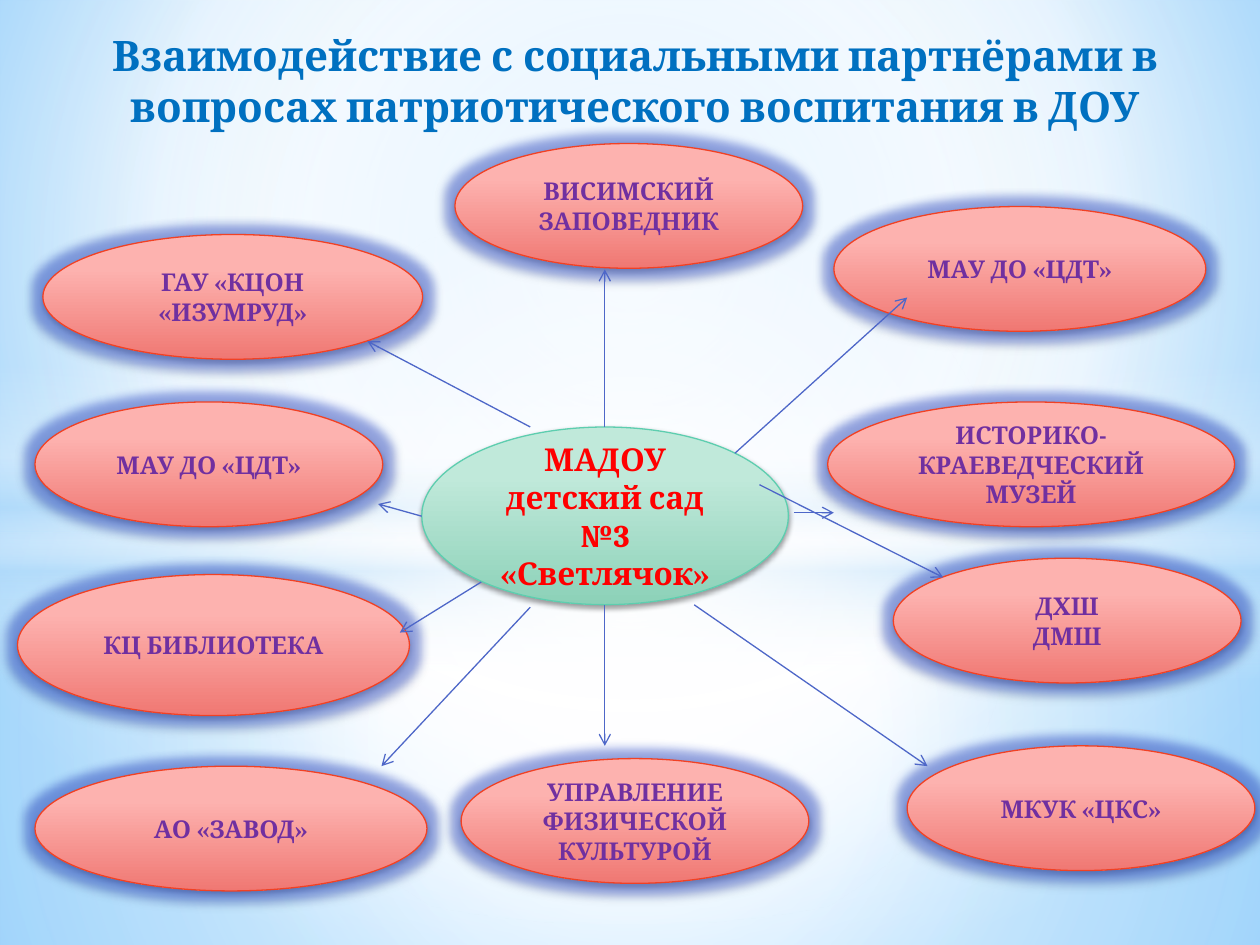
"""Builds a slide of a kindergarten and its social partners."""
from typing import NamedTuple, Optional

import lxml.etree
import pptx
import pptx.dml.color
import pptx.enum.shapes
import pptx.enum.text
import pptx.oxml
import pptx.oxml.ns
import pptx.util

Pt = pptx.util.Pt
Shapes = pptx.enum.shapes.MSO_SHAPE
FONT = "Cambria"
COLORS = {
    "title": "0070C0", "center_text": "FF0000", "partner_text": "7030A0",
    "center_light": "C0E9DA", "center_dark": "8CD1B8", "center_line": "5DCEAF",
    "partner_light": "FDB2AF", "partner_dark": "F07873", "partner_line": "F14124",
    "arrow": "4E67C8", "glow": "2F52E0", "shadow": "000000",
    "white": "FFFFFF", "haze": "B4DCFA", "sky": "9ED5FF", "deep_sky": "5BB9FF",
}


class Stop(NamedTuple):
    position: int
    color: str
    opacity: int = 100


class Gradient(NamedTuple):
    stops: list[Stop]
    focus: Optional[tuple[int, int, int, int]] = None


class Box(NamedTuple):
    left: float
    top: float
    width: float
    height: float = 71.3


class Backdrop(NamedTuple):
    shape_type: Shapes
    box: Box
    gradient: Gradient


class Style(NamedTuple):
    name: str
    size: float
    glow: float


class Partner(NamedTuple):
    lines: list[str]
    box: Box


class Arrow(NamedTuple):
    start: tuple[float, float]
    end: tuple[float, float]


CENTERED = (50, 50, 50, 50)
BACKGROUND = Gradient([Stop(0, "sky"), Stop(60, "white"), Stop(100, "deep_sky")], (20, 10, 20, 60))
BACKDROPS = [
    Backdrop(Shapes.RECTANGLE, Box(0, 304.5, 720, 235.5), Gradient(
        [Stop(0, "white", 91), Stop(37, "white", 76), Stop(100, "haze", 79)], CENTERED)),
    Backdrop(Shapes.RECTANGLE, Box(0, 0, 720, 304.5), Gradient(
        [Stop(0, "white", 89), Stop(48, "white", 62), Stop(100, "haze", 79)], CENTERED)),
    Backdrop(Shapes.RECTANGLE, Box(0, 209, 720, 180), Gradient(
        [Stop(0, "white", 0), Stop(29, "white", 30), Stop(45, "haze", 40),
         Stop(55, "white", 26), Stop(65, "haze", 60), Stop(100, "white", 0)])),
    Backdrop(Shapes.OVAL, Box(0, 126, 720, 402), Gradient(
        [Stop(0, "white"), Stop(54, "white", 0)], CENTERED)),
]
TITLE = "Взаимодействие с социальными партнёрами в вопросах патриотического воспитания в ДОУ"
CENTER = Partner(["МАДОУ", "детский сад №3", "«Светлячок»"], Box(241, 244, 209.5, 101.5))
PARTNERS = [
    Partner(["МАУ ДО «ЦДТ»"], Box(476.5, 118, 212.5)),
    Partner(["ИСТОРИКО-", "КРАЕВЕДЧЕСКИЙ", "МУЗЕЙ"], Box(473, 229.7, 232.5)),
    Partner(["УПРАВЛЕНИЕ", "ФИЗИЧЕСКОЙ КУЛЬТУРОЙ"], Box(263.5, 433.5, 198.7)),
    Partner(["КЦ БИБЛИОТЕКА"], Box(10, 328.3, 224, 80.6)),
    Partner(["МАУ ДО «ЦДТ»"], Box(20, 229.7, 198.7)),
    Partner(["ГАУ «КЦОН «ИЗУМРУД»"], Box(24.5, 134, 217)),
    Partner(["ВИСИМСКИЙ", "ЗАПОВЕДНИК"], Box(260, 82, 198.7)),
    Partner(["ДХШ", "ДМШ"], Box(510.5, 319, 198.7)),
    Partner(["АО «ЗАВОД»"], Box(20, 437.8, 224)),
    Partner(["МКУК «ЦКС»"], Box(518.4, 426.2, 198.7)),
]
ARROWS = [
    Arrow((420, 259), (518.4, 170)),
    Arrow((345.6, 244), (345.6, 154)),
    Arrow((303, 244), (210, 195)),
    Arrow((241, 295), (216, 288)),
    Arrow((275, 332.6), (228.5, 361.5)),
    Arrow((345.6, 345.6), (345.6, 426.2)),
    Arrow((453.6, 293), (476.5, 293)),
    Arrow((434, 277), (539, 330)),
    Arrow((303, 347), (218, 437.8)),
    Arrow((396.7, 345.6), (530, 437.8)),
]


def add_node(parent: lxml.etree._Element, tag: str, **attributes: object) -> lxml.etree._Element:
    """Append a DrawingML element."""
    values = {key: str(value) for key, value in attributes.items()}
    return lxml.etree.SubElement(parent, pptx.oxml.ns.qn(f"a:{tag}"), values)


def add_color(parent: lxml.etree._Element, color: str, opacity: int) -> None:
    """Append a colour with its opacity in percent."""
    node = add_node(parent, "srgbClr", val=COLORS[color])
    if opacity < 100:
        add_node(node, "alpha", val=opacity * 1000)


def fill_gradient(fill, owner: lxml.etree._Element, gradient: Gradient) -> None:
    """Give the owner of a fill a linear or circular gradient."""
    fill.gradient()
    node = owner.find(".//" + pptx.oxml.ns.qn("a:gradFill"))
    for child in list(node):
        node.remove(child)
    stop_list = add_node(node, "gsLst")
    for stop in gradient.stops:
        add_color(add_node(stop_list, "gs", pos=stop.position * 1000), stop.color, stop.opacity)
    if gradient.focus:
        sides = {side: value * 1000 for side, value in zip("ltrb", gradient.focus)}
        add_node(add_node(node, "path", path="circle"), "fillToRect", **sides)
    else:
        add_node(node, "lin", ang=90 * 60000, scaled=0)


def add_filled_shape(slide, shape_type: Shapes, box: Box, gradient: Gradient):
    """Add a shape with a gradient and no outline."""
    shape = slide.shapes.add_shape(shape_type, *map(Pt, box))
    shape.shadow.inherit = False
    fill_gradient(shape.fill, shape.element.spPr, gradient)
    shape.line.fill.background()
    return shape


def write_text(shape, lines: list[str], size: float, color: str) -> None:
    """Write centred bold paragraphs."""
    frame = shape.text_frame
    frame.word_wrap = True
    frame.text = "\n".join(lines)
    for paragraph in frame.paragraphs:
        paragraph.alignment = pptx.enum.text.PP_ALIGN.CENTER
        paragraph.font.name = FONT
        paragraph.font.size = Pt(size)
        paragraph.font.bold = True
        paragraph.font.color.rgb = pptx.dml.color.RGBColor.from_string(COLORS[color])


def add_partner(slide, partner: Partner, style: Style) -> None:
    """Add a labelled ellipse with its shadow and optional glow."""
    gradient = Gradient([Stop(28, f"{style.name}_light"), Stop(100, f"{style.name}_dark")])
    shape = add_filled_shape(slide, Shapes.OVAL, partner.box, gradient)
    shape.line.color.rgb = pptx.dml.color.RGBColor.from_string(COLORS[f"{style.name}_line"])
    shape.line.width = Pt(0.75)
    effects = shape.element.spPr.find(pptx.oxml.ns.qn("a:effectLst"))
    if style.glow:
        add_color(add_node(effects, "glow", rad=Pt(style.glow)), "glow", 40)
    shadow = add_node(effects, "outerShdw", blurRad=Pt(3.1), dist=Pt(1.6),
                      dir=90 * 60000, rotWithShape=0)
    add_color(shadow, "shadow", 38)
    shape.text_frame.vertical_anchor = pptx.enum.text.MSO_ANCHOR.MIDDLE
    write_text(shape, partner.lines, style.size, f"{style.name}_text")


def add_arrow(slide, arrow: Arrow) -> None:
    """Add a thin line with an open arrowhead."""
    connector = slide.shapes.add_connector(
        pptx.enum.shapes.MSO_CONNECTOR.STRAIGHT, *map(Pt, arrow.start + arrow.end))
    connector.line.color.rgb = pptx.dml.color.RGBColor.from_string(COLORS["arrow"])
    connector.line.width = Pt(0.75)
    add_node(connector.line._get_or_add_ln(), "tailEnd", type="arrow")
    add_node(connector.element.spPr, "effectLst")


def main() -> None:
    """Build and save the presentation."""
    presentation = pptx.Presentation()
    presentation.slide_width, presentation.slide_height = Pt(720), Pt(540)
    slide = presentation.slides.add_slide(presentation.slide_layouts[6])
    fill_gradient(slide.background.fill, slide.element, BACKGROUND)
    for backdrop in BACKDROPS:
        add_filled_shape(slide, *backdrop)
    title = slide.shapes.add_textbox(*map(Pt, Box(20, 13.5, 686, 65.5)))
    write_text(title, [TITLE], 24, "title")
    add_partner(slide, CENTER, Style("center", 18, 0))
    for partner in PARTNERS:
        add_partner(slide, partner, Style("partner", 14, 11))
    for arrow in ARROWS:
        add_arrow(slide, arrow)
    presentation.save("out.pptx")


if __name__ == "__main__":
    main()
